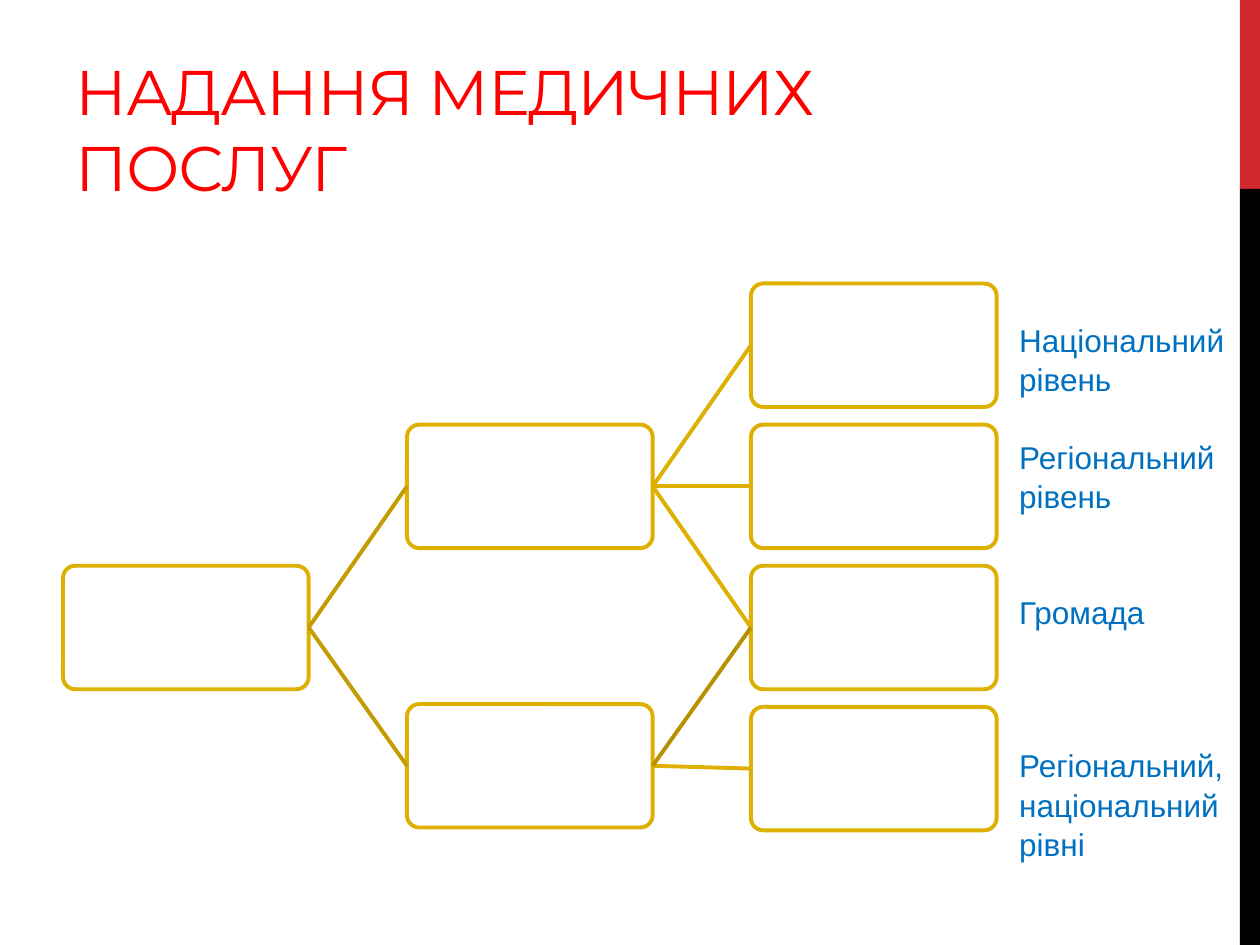
from lxml import etree
from pptx import Presentation
from pptx.dml.color import RGBColor
from pptx.enum.shapes import MSO_CONNECTOR, MSO_SHAPE
from pptx.enum.text import MSO_ANCHOR
from pptx.oxml.ns import qn
from pptx.util import Inches, Pt

RECTANGLE = MSO_SHAPE.RECTANGLE
ROUNDED = MSO_SHAPE.ROUNDED_RECTANGLE
STRAIGHT = MSO_CONNECTOR.STRAIGHT
BOTTOM = MSO_ANCHOR.BOTTOM
LEFT_SIDE, RIGHT_SIDE = 1, 3

RED = RGBColor(0xFF, 0x00, 0x00)
CRIMSON = RGBColor(0xD1, 0x28, 0x2E)
BLACK = RGBColor(0x00, 0x00, 0x00)
WHITE = RGBColor(0xFF, 0xFF, 0xFF)
BLUE = RGBColor(0x00, 0x70, 0xC0)
GOLD = RGBColor(0xDE, 0xB0, 0x01)
DARK_GOLD = RGBColor(0xC4, 0x9B, 0x01)
DEEP_GOLD = RGBColor(0xB8, 0x91, 0x01)

TITLE = "НАДАННЯ МЕДИЧНИХ ПОСЛУГ"
# Label and the number of empty lines above it
LABELS = [
    ("Національний рівень", 1),
    ("Регіональний рівень", 1),
    ("Громада", 2),
    ("Регіональний, національний рівні", 3),
]
# Box name: (column, row) in the tree grid
BOXES = {
    "root": (0, 2),
    "upper branch": (1, 1),
    "lower branch": (1, 2.98),
    "national": (2, 0),
    "regional": (2, 1),
    "community": (2, 2),
    "mixed": (2, 3),
}
LINKS = [
    ("root", "upper branch", DARK_GOLD),
    ("root", "lower branch", DARK_GOLD),
    ("upper branch", "national", GOLD),
    ("upper branch", "regional", GOLD),
    ("upper branch", "community", GOLD),
    ("lower branch", "mixed", GOLD),
    ("lower branch", "community", DEEP_GOLD),
]

SLIDE_WIDTH, SLIDE_HEIGHT = 10, 7.5
BAND_WIDTH = 0.16
GRID_LEFT, GRID_TOP = 0.5, 2.25
COLUMN_STEP, ROW_STEP = 2.73, 1.12
BOX_WIDTH, BOX_HEIGHT = 1.95, 0.98
LINE_WIDTH = Pt(2.25)
LABEL_LINE = 0.3


def add_filled(slide, preset, left, top, width, height, color):
    shape = slide.shapes.add_shape(
        preset, Inches(left), Inches(top), Inches(width), Inches(height))
    shape.shadow.inherit = False
    shape.fill.solid()
    shape.fill.fore_color.rgb = color
    shape.line.fill.background()
    return shape


def add_text_frame(slide, left, top, width, height):
    text_box = slide.shapes.add_textbox(
        Inches(left), Inches(top), Inches(width), Inches(height))
    text_box.text_frame.word_wrap = True
    return text_box.text_frame


def style_run(run, font_name, size, color):
    run.font.name = font_name
    run.font.size = Pt(size)
    run.font.color.rgb = color


def add_side_band(slide):
    left, split = SLIDE_WIDTH - BAND_WIDTH, SLIDE_HEIGHT / 5
    add_filled(slide, RECTANGLE, left, 0, BAND_WIDTH, split, CRIMSON)
    add_filled(slide, RECTANGLE, left, split, BAND_WIDTH, SLIDE_HEIGHT - split, BLACK)


def add_title(slide):
    frame = add_text_frame(slide, GRID_LEFT, 0.17, 6.33, 1.5)
    frame.vertical_anchor = BOTTOM
    frame.text = TITLE
    run = frame.paragraphs[0].runs[0]
    style_run(run, "Montserrat", 36, RED)
    run.font._element.set("spc", "-60")


def add_tree(slide):
    boxes = {}
    for name, (column, row) in BOXES.items():
        box = add_filled(
            slide, ROUNDED, GRID_LEFT + column * COLUMN_STEP,
            GRID_TOP + row * ROW_STEP, BOX_WIDTH, BOX_HEIGHT, WHITE)
        box.adjustments[0] = 0.1
        box.line.color.rgb = GOLD
        box.line.width = LINE_WIDTH
        boxes[name] = box
    for parent, child, color in LINKS:
        link = slide.shapes.add_connector(STRAIGHT, 0, 0, 0, 0)
        link.begin_connect(boxes[parent], RIGHT_SIDE)
        link.end_connect(boxes[child], LEFT_SIDE)
        link.line.color.rgb = color
        link.line.width = LINE_WIDTH
        etree.SubElement(link._element.spPr, qn("a:effectLst"))


def add_labels(slide):
    frame = add_text_frame(slide, 7.99, 2.18, 1.89, 4.64)
    frame.margin_top = Inches(0.05 + LABELS[0][1] * LABEL_LINE)
    for index, (label, lines_above) in enumerate(LABELS):
        paragraph = frame.add_paragraph() if index else frame.paragraphs[0]
        paragraph.text = label
        paragraph.line_spacing = 1.05
        if index:
            paragraph.space_before = Inches(lines_above * LABEL_LINE)
        style_run(paragraph.runs[0], "Arial", 18, BLUE)


def main():
    presentation = Presentation()
    presentation.slide_width = Inches(SLIDE_WIDTH)
    presentation.slide_height = Inches(SLIDE_HEIGHT)
    slide = presentation.slides.add_slide(presentation.slide_layouts[6])
    add_side_band(slide)
    add_title(slide)
    add_tree(slide)
    add_labels(slide)
    presentation.save("out.pptx")


if __name__ == "__main__":
    main()
